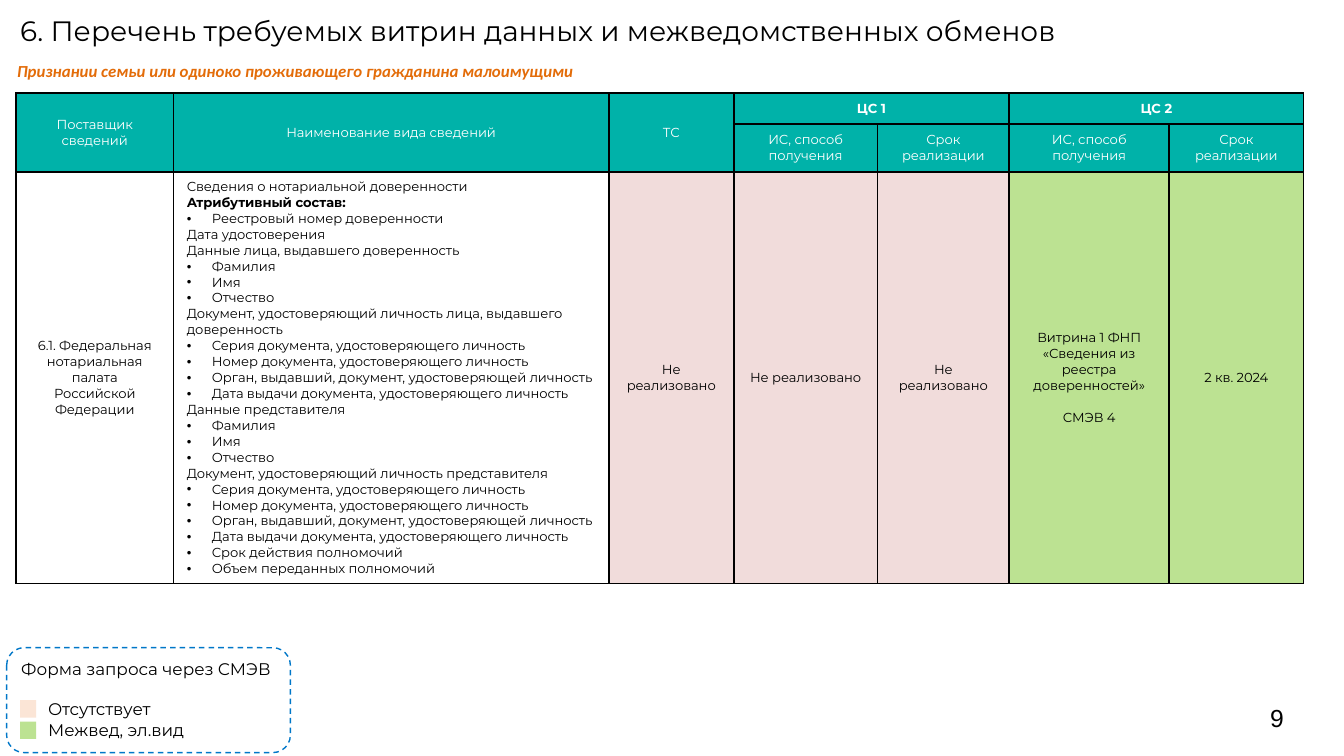
import pptx
import pptx.dml.color
import pptx.enum.dml
import pptx.enum.shapes
import pptx.enum.text
import pptx.oxml
import pptx.oxml.ns
import pptx.util

Pt = pptx.util.Pt
ALIGN = pptx.enum.text.PP_ALIGN
ANCHOR = pptx.enum.text.MSO_ANCHOR
SHAPE = pptx.enum.shapes.MSO_SHAPE

BLACK, WHITE, TEAL = "000000", "FFFFFF", "00B2A9"
ORANGE, BLUE = "E36C09", "0077C8"
PINK, GREEN, PEACH = "F1DCDB", "BCE292", "FBE5D6"

PERSON = ["•Фамилия", "•Имя", "•Отчество"]
DOCUMENT = [
    "•Серия документа, удостоверяющего личность",
    "•Номер документа, удостоверяющего личность",
    "•Орган, выдавший, документ, удостоверяющей личность",
    "•Дата выдачи документа, удостоверяющего личность",
]
DETAILS = [
    "Сведения о нотариальной доверенности",
    "Атрибутивный состав:",
    "•Реестровый номер доверенности",
    "Дата удостоверения",
    "Данные лица, выдавшего доверенность",
    *PERSON,
    "Документ, удостоверяющий личность лица, выдавшего доверенность",
    *DOCUMENT,
    "Данные представителя",
    *PERSON,
    "Документ, удостоверяющий личность представителя",
    *DOCUMENT,
    "•Срок действия полномочий",
    "•Объем переданных полномочий",
]
COLUMN_WIDTHS = [84.24, 233.28, 66.96, 77.04, 70.56, 85.68, 72]
ROW_HEIGHTS = [16.56, 25.92, 220.32]
HEADERS = ["Поставщик сведений", "Наименование вида сведений", "ТС"]
SYSTEMS = ["ЦС 1", "ЦС 2"]
SYSTEM_HEADERS = ["ИС, способ получения", "Срок реализации"]
MISSING = "Не реализовано"


def color(value):
    return pptx.dml.color.RGBColor.from_string(value)


class SlideBuilder:
    font = "Montserrat"
    bullet_indent = 13.5

    def __init__(self, page):
        self.page = page

    def set_lines(self, frame, lines, size, ink=BLACK, font=None, bold=False,
                  italic=False, align=ALIGN.LEFT):
        frame.word_wrap = True
        frame.text = "\n".join(line.lstrip("•") for line in lines)
        for line, para in zip(lines, frame.paragraphs):
            para.alignment = align
            if line.startswith("•"):
                self.bullet(para)
            for span in para.runs:
                span.font.name = font or self.font
                span.font.size = Pt(size)
                span.font.bold = bold
                span.font.italic = italic
                span.font.color.rgb = color(ink)
        return frame.paragraphs

    def bullet(self, para):
        properties = para._p.get_or_add_pPr()
        properties.set("marL", str(Pt(self.bullet_indent)))
        properties.set("indent", str(-Pt(self.bullet_indent)))
        namespace = pptx.oxml.ns.nsdecls("a")
        for tag in ('buFont typeface="Arial"', 'buChar char="•"'):
            properties.append(pptx.oxml.parse_xml(f"<a:{tag} {namespace}/>"))

    def text(self, left, top, width, height, lines, size, inset=(7.2, 3.6),
             anchor=ANCHOR.TOP, **style):
        box = self.page.shapes.add_textbox(Pt(left), Pt(top), Pt(width), Pt(height))
        frame = box.text_frame
        frame.margin_left = frame.margin_right = Pt(inset[0])
        frame.margin_top = frame.margin_bottom = Pt(inset[1])
        frame.vertical_anchor = anchor
        return self.set_lines(frame, lines, size, **style)

    def swatch(self, left, top, width, height, fill):
        box = self.page.shapes.add_shape(
            SHAPE.RECTANGLE, Pt(left), Pt(top), Pt(width), Pt(height))
        box.shadow.inherit = False
        box.fill.solid()
        box.fill.fore_color.rgb = color(fill)
        box.line.fill.background()

    def dashed_frame(self, left, top, width, height, line):
        box = self.page.shapes.add_shape(
            SHAPE.ROUNDED_RECTANGLE, Pt(left), Pt(top), Pt(width), Pt(height))
        box.shadow.inherit = False
        box.fill.background()
        box.line.color.rgb = color(line)
        box.line.width = Pt(0.75)
        box.line.dash_style = pptx.enum.dml.MSO_LINE.DASH

    def table(self, left, top, widths, heights):
        table = self.page.shapes.add_table(
            len(heights), len(widths), Pt(left), Pt(top),
            Pt(sum(widths)), Pt(sum(heights))).table
        table.first_row = table.horz_banding = False
        for column, width in zip(table.columns, widths):
            column.width = Pt(width)
        for row, height in zip(table.rows, heights):
            row.height = Pt(height)
        for cell in table.iter_cells():
            self.borders(cell)
            cell.fill.background()
        return table

    def borders(self, cell):
        properties = cell._tc.get_or_add_tcPr()
        for side in "LRTB":
            properties.append(pptx.oxml.parse_xml(
                f'<a:ln{side} {pptx.oxml.ns.nsdecls("a")} w="{Pt(1)}"><a:solidFill>'
                f'<a:srgbClr val="{BLACK}"/></a:solidFill></a:ln{side}>'))

    def cell(self, cell, lines, fill=None, align=ALIGN.CENTER, **style):
        cell.vertical_anchor = ANCHOR.MIDDLE
        if fill:
            cell.fill.solid()
            cell.fill.fore_color.rgb = color(fill)
        return self.set_lines(cell.text_frame, lines, 7, align=align, **style)


def add_exchange_table(builder):
    table = builder.table(8.64, 49.8, COLUMN_WIDTHS, ROW_HEIGHTS)
    header = {"fill": TEAL, "ink": WHITE}
    for column, label in enumerate(HEADERS):
        table.cell(0, column).merge(table.cell(1, column))
        builder.cell(table.cell(0, column), [label], **header)
    for index, system in enumerate(SYSTEMS):
        first = len(HEADERS) + index * len(SYSTEM_HEADERS)
        table.cell(0, first).merge(table.cell(0, first + 1))
        builder.cell(table.cell(0, first), [system], bold=True, **header)
        for offset, label in enumerate(SYSTEM_HEADERS):
            builder.cell(table.cell(1, first + offset), [label], **header)

    builder.cell(table.cell(2, 0),
                 ["6.1. Федеральная нотариальная палата Российской Федерации"])
    details = builder.cell(table.cell(2, 1), DETAILS, align=ALIGN.LEFT)
    details[1].runs[0].font.bold = True
    for column in range(2, 5):
        builder.cell(table.cell(2, column), [MISSING], PINK)
    source = builder.cell(
        table.cell(2, 5),
        ["Витрина 1 ФНП «Сведения из реестра доверенностей»", "СМЭВ 4"], GREEN)
    source[1].space_before = Pt(8.5)
    builder.cell(table.cell(2, 6), ["2 кв. 2024"], GREEN)


def add_legend(builder):
    legend = builder.text(
        4.32, 349.2, 151.2, 51.1,
        ["Форма запроса через СМЭВ", "Отсутствует", "Межвед, эл.вид"], 9)
    legend[1].space_before = Pt(11)
    for para in legend[1:]:
        para._p.get_or_add_pPr().set("marL", str(Pt(14.4)))
    for top, fill in ((375.1, PEACH), (386.6, GREEN)):
        builder.swatch(10.8, top, 8.64, 9.36, fill)
    builder.dashed_frame(3.6, 347, 152, 56.2, BLUE)


def main():
    deck = pptx.Presentation()
    deck.slide_width, deck.slide_height = Pt(720), Pt(405)
    builder = SlideBuilder(deck.slides.add_slide(deck.slide_layouts[6]))
    builder.text(680.4, 373.7, 33.84, 21.6, ["9"], 13.2, inset=(0, 0),
                 anchor=ANCHOR.MIDDLE, font="Arial")
    add_legend(builder)
    builder.text(
        10.8, 7.2, 609.1, 43.2,
        ["6. Перечень требуемых витрин данных и межведомственных обменов"],
        15, inset=(0, 0))
    add_exchange_table(builder)
    builder.text(
        2.16, 28.8, 563.8, 18,
        ["Признании семьи или одиноко проживающего гражданина малоимущими"],
        9, ink=ORANGE, font="Calibri", bold=True, italic=True)
    deck.save("out.pptx")


if __name__ == "__main__":
    main()
